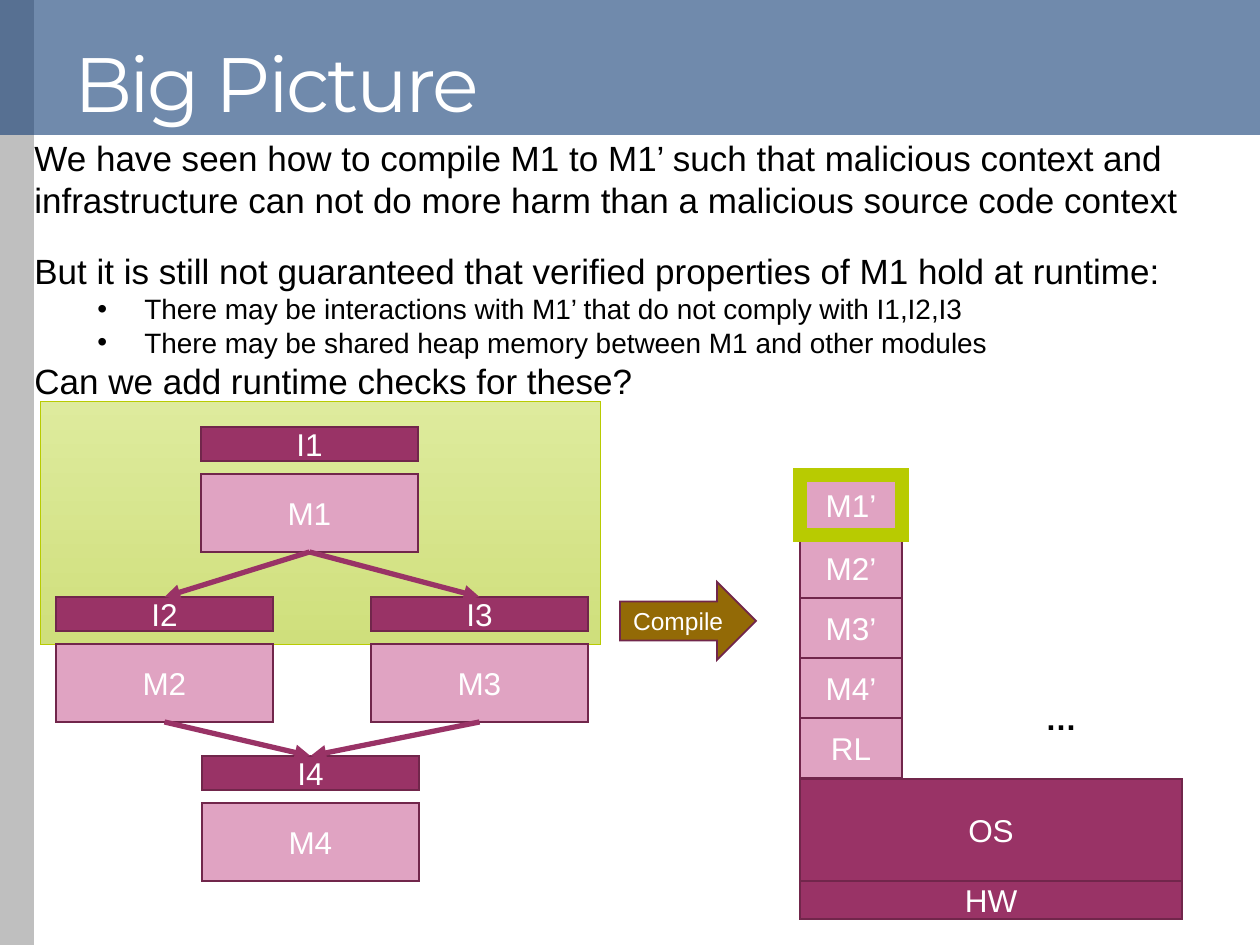
from lxml.etree import SubElement
from pptx import Presentation
from pptx.dml.color import RGBColor
from pptx.enum.shapes import MSO_CONNECTOR as Link, MSO_SHAPE as Shape
from pptx.enum.text import MSO_ANCHOR as Anchor, PP_ALIGN as Align
from pptx.oxml.ns import qn
from pptx.util import Pt

WHITE = RGBColor(0xFF, 0xFF, 0xFF)
BLACK = RGBColor(0, 0, 0)
GREY = RGBColor(0xBF, 0xBF, 0xBF)
NAVY = RGBColor(0x12, 0x3C, 0x75)
PINK = RGBColor(0xE0, 0xA3, 0xC2)
PLUM = RGBColor(0x99, 0x33, 0x66)
EDGE = RGBColor(0x71, 0x26, 0x4B)
LIME = RGBColor(0xB8, 0xCB, 0x01)
PALE = RGBColor(0xDE, 0xEB, 0x9D)
MOSS = RGBColor(0xCF, 0xDF, 0x7C)
BROWN = RGBColor(0x93, 0x6A, 0x06)

INTRO = ("We have seen how to compile M1 to M1’ such that malicious context and\v"
         "infrastructure can not do more harm than a malicious source code context")
STILL = "But it is still not guaranteed that verified properties of M1 hold at runtime:"
POINTS = (
    "There may be interactions with M1’ that do not comply with I1,I2,I3",
    "There may be shared heap memory between M1 and other modules",
)
ASK = "Can we add runtime checks for these?"


def px(n):
    return round(n * 914400 / 126)


def write(para, text, size=18, color=WHITE, face="Arial", bold=False,
          align=Align.LEFT, lead=1.0, gap=0, left=0, hang=0, bullet=None, track=0):
    props = para._p.get_or_add_pPr()
    props.set("marL", str(px(left)))
    props.set("indent", str(px(hang)))
    if bullet:
        SubElement(props, qn("a:buFont"), typeface="Arial")
        SubElement(props, qn("a:buChar"), char=bullet)
    para.alignment = align
    para.line_spacing = lead
    para.space_before = Pt(gap)
    para.text = text
    for run in para.runs:
        font = run.font
        font.size, font.name, font.bold = Pt(size), face, bold
        font.color.rgb = color
        if track:
            run._r.get_or_add_rPr().set("spc", str(track))


def block(slide, x, y, w, h, fill, text="", kind=Shape.RECTANGLE,
          edge=EDGE, width=1, **look):
    item = slide.shapes.add_shape(kind, px(x), px(y), px(w), px(h))
    item.shadow.inherit = False
    item.fill.solid()
    item.fill.fore_color.rgb = fill
    if edge is None:
        item.line.fill.background()
    else:
        item.line.color.rgb = edge
        item.line.width = Pt(width)
        SubElement(item.line._get_or_add_ln(), qn("a:miter"), lim="800000")
    if text:
        frame = item.text_frame
        frame.word_wrap = False
        frame.vertical_anchor = Anchor.MIDDLE
        write(frame.paragraphs[0], text, **{"align": Align.CENTER, **look})
    return item


def label(slide, x, y, w, h):
    frame = slide.shapes.add_textbox(px(x), px(y), px(w), px(h)).text_frame
    frame.word_wrap = False
    return frame


def banner(slide):
    bar = block(slide, 0, 0, 1260, 135, NAVY, "Big Picture", edge=None, size=44,
                face="Montserrat", align=Align.LEFT, lead=0.9, left=62, track=-150)
    bar.text_frame.word_wrap = True
    bar.text_frame.vertical_anchor = Anchor.BOTTOM
    tint = bar.fill._xPr.find(qn("a:solidFill"))[0]
    SubElement(tint, qn("a:alpha"), val="60000")


def scope(slide):
    area = block(slide, 40, 401, 561, 243, PALE, edge=LIME, width=0.5)
    area.fill.gradient()
    area.fill.gradient_angle = 270
    for stop, color in zip(area.fill.gradient_stops, (PALE, MOSS)):
        stop.color.rgb = color


def module(slide, num, x, y):
    body = block(slide, x, y + 47, 217, 78, PINK, f"M{num}")
    head = block(slide, x, y, 217, 34, PLUM, f"I{num}")
    return head, body


def arrow(slide, start, end):
    line = slide.shapes.add_connector(Link.STRAIGHT, 0, 0, 0, 0)
    line.begin_connect(start, 2)
    line.end_connect(end, 0)
    line.line.color.rgb = PLUM
    line.line.width = Pt(3)
    SubElement(line.line._get_or_add_ln(), qn("a:tailEnd"), type="triangle")
    SubElement(line._element.spPr, qn("a:effectLst"))


def prose(slide):
    frame = label(slide, 22, 130, 1177, 280)
    rows = [(INTRO, {}), (STILL, {"gap": 17})]
    rows += [(point, {"size": 16, "left": 110, "hang": -47, "bullet": "•"})
             for point in POINTS]
    rows.append((ASK, {}))
    for i, (text, look) in enumerate(rows):
        para = frame.add_paragraph() if i else frame.paragraphs[0]
        write(para, text, **{"size": 20, "color": BLACK, **look})


def graph(slide):
    spots = ((201, 427), (56, 597), (371, 597), (202, 756))
    mods = [module(slide, n, x, y) for n, (x, y) in enumerate(spots, 1)]
    for a, b in ((0, 1), (0, 2), (1, 3), (2, 3)):
        arrow(slide, mods[a][1], mods[b][0])


def stack(slide):
    for i, name in enumerate(("M2’", "M3’", "M4’", "RL")):
        block(slide, 800, 538 + 60 * i, 102, 60, PINK, name)
    block(slide, 800, 779, 382, 102, PLUM, "OS")
    block(slide, 800, 881, 382, 38, PLUM, "HW")
    dots = label(slide, 1033, 693, 57, 50)
    write(dots.paragraphs[0], "…", color=BLACK, bold=True)
    block(slide, 800, 475, 102, 60, PINK, "M1’", edge=LIME, width=8)


def main():
    deck = Presentation()
    deck.slide_width, deck.slide_height = px(1260), px(945)
    slide = deck.slides.add_slide(deck.slide_layouts[6])
    block(slide, 0, 0, 34, 945, GREY, edge=None)
    scope(slide)
    banner(slide)
    graph(slide)
    prose(slide)
    block(slide, 620, 582, 136, 78, BROWN, "Compile", kind=Shape.RIGHT_ARROW, size=14)
    stack(slide)
    deck.save("out.pptx")


if __name__ == "__main__":
    main()
